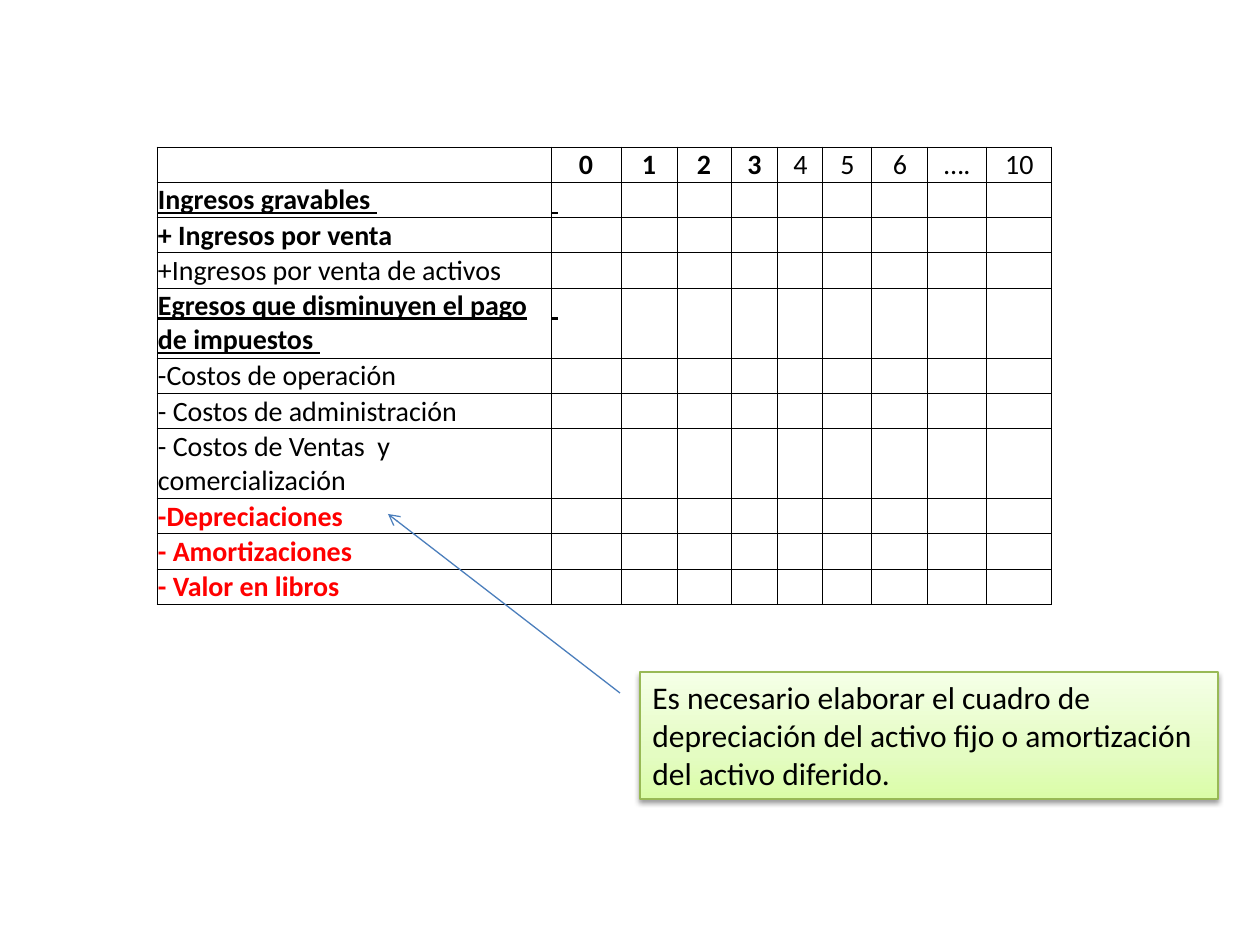
from lxml import etree
from pptx import Presentation
from pptx.dml.color import RGBColor
from pptx.enum.shapes import MSO_CONNECTOR, MSO_SHAPE
from pptx.enum.text import MSO_ANCHOR, PP_ALIGN
from pptx.oxml.ns import qn
from pptx.util import Emu, Pt

LEFT, CENTER = PP_ALIGN.LEFT, PP_ALIGN.CENTER
TOP, MIDDLE, BOTTOM = MSO_ANCHOR.TOP, MSO_ANCHOR.MIDDLE, MSO_ANCHOR.BOTTOM
RECTANGLE = MSO_SHAPE.RECTANGLE
STRAIGHT = MSO_CONNECTOR.STRAIGHT

PX_PER_INCH = 126
COLORS = {
    "text": "000000",
    "grid": "000000",
    "cell": "FFFFFF",
    "highlight": "FF0000",
    "arrow": "4B7EBC",
    "note_edge": "98B955",
    "note_bottom": "DAFDA7",
    "note_middle": "E4FCC2",
    "note_top": "F5FFE7",
    "shadow": "000000",
}


def px(length):
    return Emu(round(length * 914400 / PX_PER_INCH))


def rgb(name):
    return RGBColor.from_string(COLORS[name])


def add_child(parent, tag, **attributes):
    return etree.SubElement(parent, qn(tag), {k: str(v) for k, v in attributes.items()})


def write(frame, text, size=16, color="text", bold=False, underline=False, align=LEFT):
    paragraph = frame.paragraphs[0]
    paragraph.alignment = align
    if not text:
        add_child(paragraph._p, "a:endParaRPr", sz=size * 100)
        return
    run = paragraph.add_run()
    run.text = text
    run.font.name = "Calibri"
    run.font.size = Pt(size)
    run.font.bold = bold
    run.font.underline = underline
    run.font.color.rgb = rgb(color)


class SlideBuilder:
    def __init__(self, slide, font_size=16, line_width=0.75, grid_width=0.5):
        self.slide = slide
        self.font_size = font_size
        self.line_width = line_width
        self.grid_width = grid_width

    def cell(self, cell, text, anchor=TOP, **style):
        cell.margin_left = cell.margin_right = cell.margin_top = px(1)
        cell.margin_bottom = 0
        cell.vertical_anchor = anchor
        properties = cell._tc.get_or_add_tcPr()
        for side in ("a:lnL", "a:lnR", "a:lnT", "a:lnB"):
            border = add_child(properties, side, w=Pt(self.grid_width))
            fill = add_child(border, "a:solidFill")
            add_child(fill, "a:srgbClr", val=COLORS["grid"])
        cell.fill.solid()
        cell.fill.fore_color.rgb = rgb("cell")
        write(cell.text_frame, text, size=self.font_size, **style)

    def table(self, left, top, widths, heights, rows):
        table = self.slide.shapes.add_table(
            len(heights), len(widths), px(left), px(top), px(sum(widths)), px(sum(heights))
        ).table
        table.first_row = table.horz_banding = False
        for column, width in zip(table.columns, widths):
            column.width = px(width)
        for row, height, contents in zip(table.rows, heights, rows):
            row.height = px(height)
            for cell, (text, style) in zip(row.cells, contents):
                self.cell(cell, text, **style)

    def note(self, left, top, width, height, text, stops):
        note = self.slide.shapes.add_shape(RECTANGLE, px(left), px(top), px(width), px(height))
        note.fill.gradient()
        note.fill.gradient_angle = 90
        stop_list = note._element.spPr.find(".//" + qn("a:gsLst"))
        for stop in list(stop_list):
            stop_list.remove(stop)
        for position, color in stops:
            stop = add_child(stop_list, "a:gs", pos=position * 1000)
            add_child(stop, "a:srgbClr", val=COLORS[color])
        note.line.color.rgb = rgb("note_edge")
        note.line.width = Pt(self.line_width)
        effects = add_child(note._element.spPr, "a:effectLst")
        shadow = add_child(effects, "a:outerShdw", blurRad=Pt(3.1), dist=Pt(1.6),
                           dir=90 * 60000, rotWithShape=0)
        shade = add_child(shadow, "a:srgbClr", val=COLORS["shadow"])
        add_child(shade, "a:alpha", val=38000)
        note.text_frame.word_wrap = True
        note.text_frame.vertical_anchor = TOP
        write(note.text_frame, text, size=18)

    def arrow(self, start, end):
        arrow = self.slide.shapes.add_connector(STRAIGHT, *map(px, start + end))
        arrow.line.color.rgb = rgb("arrow")
        arrow.line.width = Pt(self.line_width)
        add_child(arrow.line._get_or_add_ln(), "a:tailEnd", type="arrow")
        add_child(arrow._element.spPr, "a:effectLst")


def main():
    presentation = Presentation()
    presentation.slide_width, presentation.slide_height = px(1260), px(945)
    builder = SlideBuilder(presentation.slides.add_slide(presentation.slide_layouts[6]))

    heading = {"bold": True, "underline": True}
    strong = {"bold": True}
    deduction = {"bold": True, "color": "highlight"}
    concepts = [
        ("Ingresos gravables ", heading),
        ("+ Ingresos por venta", strong),
        ("+Ingresos por venta de activos", {}),
        ("Egresos que disminuyen el pago de impuestos ", heading),
        ("-Costos de operación", {}),
        ("- Costos de administración", {}),
        ("- Costos de Ventas  y comercialización", {}),
        ("-Depreciaciones", deduction),
        ("- Amortizaciones", deduction),
        ("- Valor en libros", deduction),
    ]
    first_years = [(year, {"bold": True, "align": CENTER}) for year in "0123"]
    later_years = [(year, {"align": CENTER, "anchor": BOTTOM})
                   for year in ("4", "5", "6", "….", "10")]
    years = first_years + later_years
    rows = [[("", {})] + years]
    for concept, style in concepts:
        start = (" ", heading) if style is heading else ("", {})
        rows.append([(concept, style), start] + [("", {})] * (len(years) - 1))

    widths = [394, 70, 56, 54, 47, 45, 49, 56, 59, 65]
    two_line_rows = (4, 7)
    heights = [70 if index in two_line_rows else 35 for index in range(len(rows))]
    builder.table(157, 147, widths, heights, rows)
    builder.note(
        640, 672, 578, 127,
        "Es necesario elaborar el cuadro de depreciación del activo fijo "
        "o amortización del activo diferido.",
        [(0, "note_bottom"), (35, "note_middle"), (100, "note_top")],
    )
    builder.arrow((620, 693), (388, 514))
    presentation.save("out.pptx")


if __name__ == "__main__":
    main()
